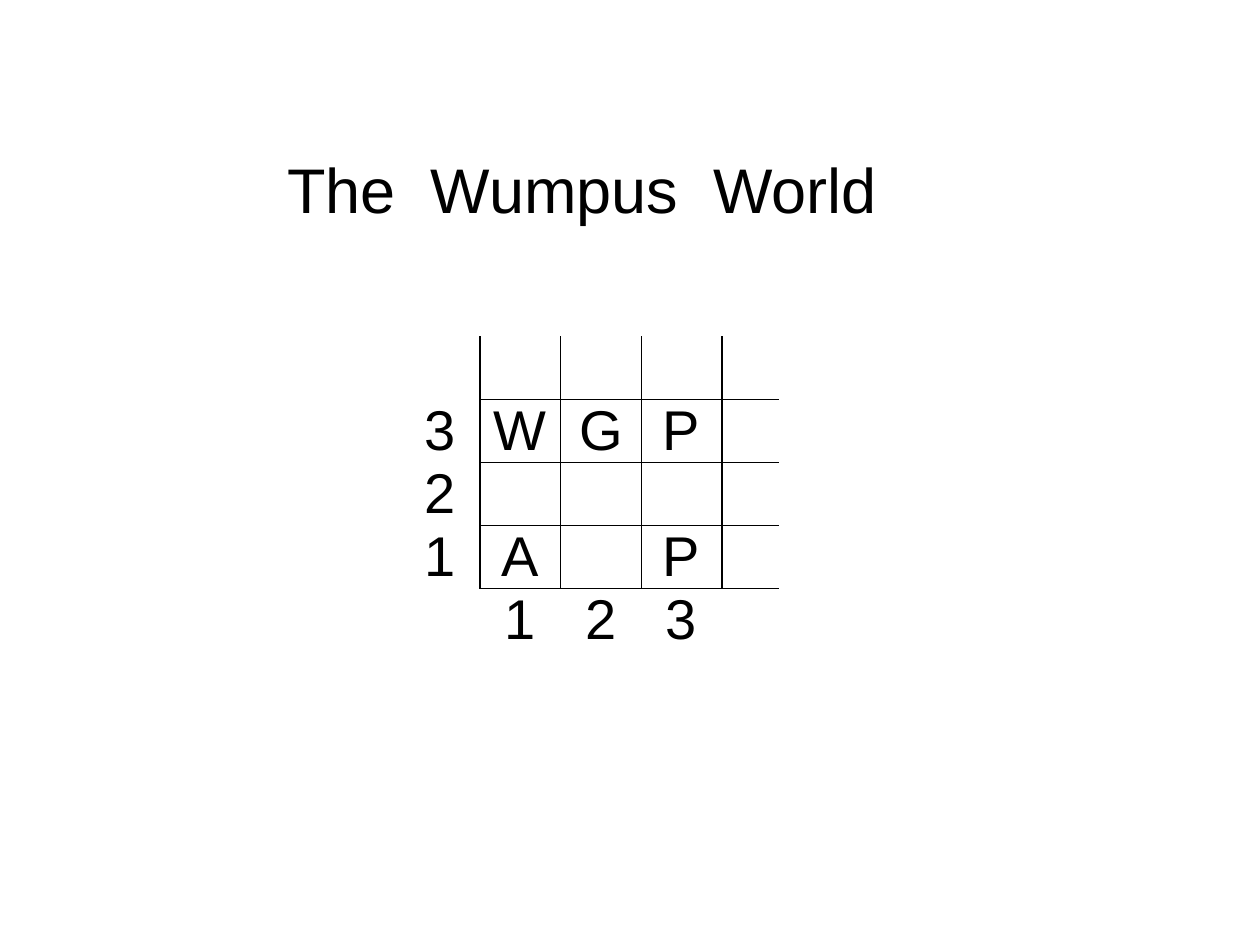
import pptx
import pptx.dml.color
import pptx.enum.text
import pptx.util
from lxml import etree
from pptx.oxml.ns import qn

INK = "000000"
WIDE, HIGH = 10, 7.5
COLS = (0.64, 0.64, 0.64, 0.64, 0.45)
ROW = 0.5
WORLD = (
    ("", "", "", "", ""),
    ("3", "W", "G", "P", ""),
    ("2", "", "", "", ""),
    ("1", "A", "", "P", ""),
    ("", "1", "2", "3", ""),
)


def color(code):
    return pptx.dml.color.RGBColor.from_string(code)


def write(frame, text, size):
    frame.vertical_anchor = pptx.enum.text.MSO_ANCHOR.MIDDLE
    para = frame.paragraphs[0]
    para.alignment = pptx.enum.text.PP_ALIGN.CENTER
    run = para.add_run()
    run.text = text
    run.font.size = pptx.util.Pt(size)
    run.font.name = "Arial"
    run.font.color.rgb = color(INK)


def border(cell, sides):
    """Rule the named sides (of L, R, T, B) and clear the rest."""
    props = cell._tc.get_or_add_tcPr()
    for side in "LRTB":
        line = etree.SubElement(props, qn("a:ln" + side), w=str(pptx.util.Pt(1)))
        if side in sides:
            fill = etree.SubElement(line, qn("a:solidFill"))
            etree.SubElement(fill, qn("a:srgbClr"), val=INK)
        else:
            etree.SubElement(line, qn("a:noFill"))


def sides(row, col):
    """The grid is open at its top and right, with labels left and below."""
    last = len(WORLD) - 1
    inner = row < last
    rules = {
        "L": inner and col > 0,
        "R": inner and col < len(COLS) - 1,
        "T": row > 0 and col > 0,
        "B": inner and col > 0,
    }
    return [side for side, shown in rules.items() if shown]


def title(slide, left, top, width, height):
    shape = slide.shapes.title
    shape.left, shape.top = pptx.util.Inches(left), pptx.util.Inches(top)
    shape.width, shape.height = pptx.util.Inches(width), pptx.util.Inches(height)
    write(shape.text_frame, "The  Wumpus  World", 36)


def world(slide, left, top):
    box = [pptx.util.Inches(n) for n in (left, top, sum(COLS), ROW * len(WORLD))]
    table = slide.shapes.add_table(len(WORLD), len(COLS), *box).table
    table.first_row = table.horz_banding = False
    for col, width in zip(table.columns, COLS):
        col.width = pptx.util.Inches(width)
    for row, texts in enumerate(WORLD):
        table.rows[row].height = pptx.util.Inches(ROW)
        for col, text in enumerate(texts):
            cell = table.cell(row, col)
            border(cell, sides(row, col))
            cell.fill.background()
            cell.margin_left = cell.margin_right = 0
            cell.margin_top = cell.margin_bottom = 0
            if text:
                write(cell.text_frame, text, 32)
                cell.vertical_anchor = pptx.enum.text.MSO_ANCHOR.MIDDLE


def main():
    deck = pptx.Presentation()
    deck.slide_width = pptx.util.Inches(WIDE)
    deck.slide_height = pptx.util.Inches(HIGH)
    slide = deck.slides.add_slide(deck.slide_layouts[5])
    world(slide, 0.317 * WIDE, 0.356 * HIGH)
    title(slide, 0.183 * WIDE, 0.144 * HIGH, 0.558 * WIDE, 0.111 * HIGH)
    deck.save("out.pptx")


if __name__ == "__main__":
    main()
